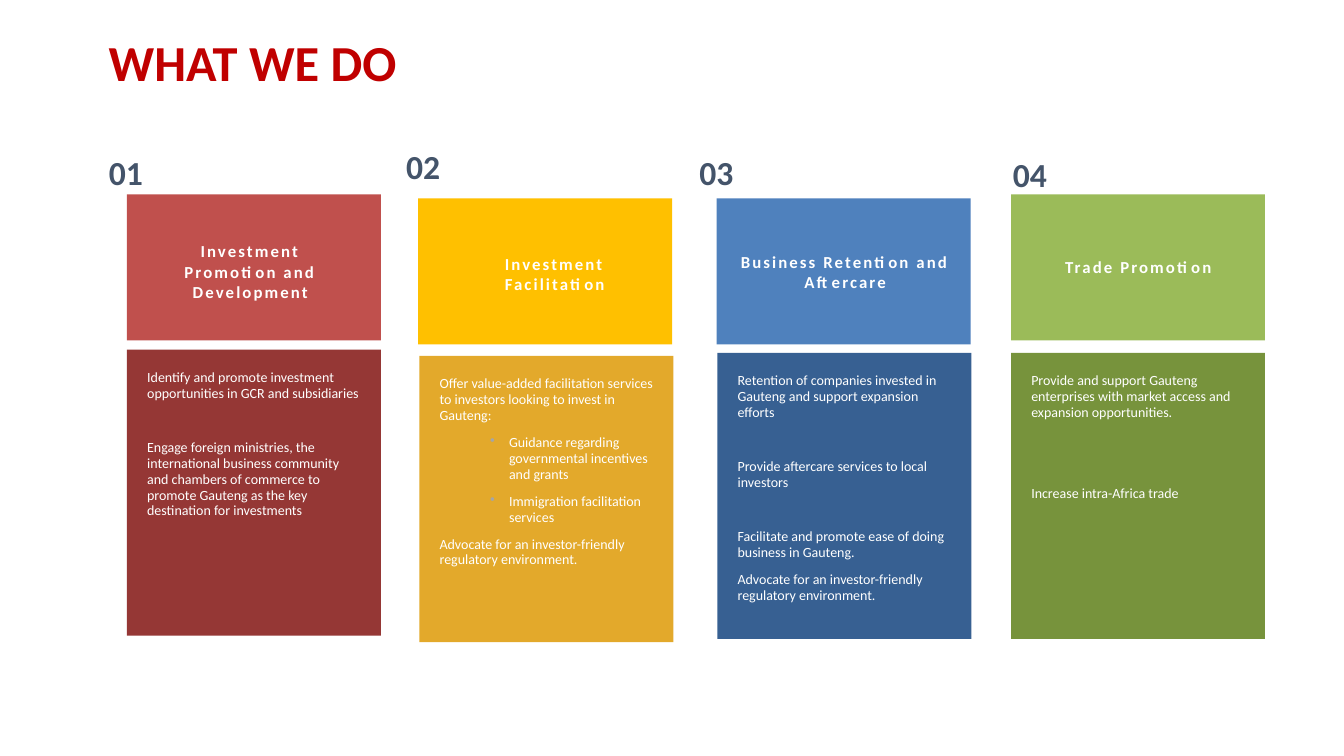
from dataclasses import dataclass

from lxml import etree
from pptx import Presentation
from pptx.dml.color import RGBColor
from pptx.enum import shapes, text
from pptx.oxml import ns
from pptx.util import Cm, Pt


@dataclass(frozen=True)
class Theme:
    font: str = "Calibri"
    title: str = "C00000"
    number: str = "44546A"
    light: str = "FFFFFF"
    bullet: str = "A5A5A5"
    title_size: int = 36
    number_size: int = 24
    heading_size: int = 12
    body_size: int = 10


@dataclass(frozen=True)
class Box:
    left: float
    top: float
    width: float
    height: float

    def lengths(self) -> list[Cm]:
        return [Cm(side) for side in (self.left, self.top, self.width, self.height)]


@dataclass(frozen=True)
class Point:
    words: str
    gap_lines: int = 0
    bulleted: bool = False


@dataclass(frozen=True)
class Service:
    number: str
    heading: str
    number_at: tuple[float, float]
    header_at: tuple[float, float]
    panel_at: tuple[float, float]
    heading_box: Box
    header_fill: str
    panel_fill: str
    points: list[Point]


THEME = Theme()
NUMBER_SIZE = (1.37, 1.27)
HEADER_SIZE = (6.4, 3.68)
PANEL_SIZE = (6.4, 7.21)
PANEL_INSET = 0.51
GAP_LINE = 19.5

ADVOCATE = Point("Advocate for an investor-friendly regulatory environment.")
SERVICES = [
    Service(
        "01", "Investment Promotion and Development",
        (2.49, 3.71), (3.2, 4.9), (3.2, 8.81), Box(3.58, 5.94, 5.46, 1.8),
        "C0504D", "953735",
        [Point("Identify and promote investment opportunities in GCR and subsidiaries"),
         Point("Engage foreign ministries, the international business community and "
               "chambers of commerce to promote Gauteng as the key destination for "
               "investments", gap_lines=1)],
    ),
    Service(
        "02", "Investment Facilitation",
        (9.98, 3.56), (10.54, 5), (10.57, 8.97), Box(11.25, 6.27, 5.46, 1.27),
        "FFC000", "E3A92B",
        [Point("Offer value-added facilitation services to investors looking to "
               "invest in Gauteng:"),
         Point("Guidance regarding governmental incentives and grants", bulleted=True),
         Point("Immigration facilitation services", bulleted=True),
         ADVOCATE],
    ),
    Service(
        "03", "Business Retention and Aftercare",
        (17.37, 3.71), (18.06, 5), (18.08, 8.89), Box(18.14, 6.22, 6.32, 1.27),
        "4F81BD", "376092",
        [Point("Retention of companies invested in Gauteng and support expansion efforts"),
         Point("Provide aftercare services to local investors", gap_lines=1),
         Point("Facilitate and promote ease of doing business in Gauteng.", gap_lines=1),
         ADVOCATE],
    ),
    Service(
        "04", "Trade Promotion",
        (25.27, 3.76), (25.48, 4.9), (25.48, 8.89), Box(25.96, 6.35, 5.46, 0.76),
        "9BBB59", "77933C",
        [Point("Provide and support Gauteng enterprises with market access and "
               "expansion opportunities."),
         Point("Increase intra-Africa trade", gap_lines=2)],
    ),
]


def apply_formats(target, formats: dict) -> None:
    for name, value in formats.items():
        setattr(target, name, value)


def write(paragraph, words: str, size: int, color: str, bold: bool = False,
          spacing: float = 0) -> None:
    run = paragraph.add_run()
    run.text = words
    apply_formats(run.font, {"name": THEME.font, "size": Pt(size), "bold": bold})
    run.font.color.rgb = RGBColor.from_string(color)
    if spacing:
        run._r.get_or_add_rPr().set("spc", str(round(spacing * 100)))


def add_label(slide, box: Box, words: str, size: int, color: str,
              wrap: bool = True, spacing: float = 0) -> None:
    label = slide.shapes.add_textbox(*box.lengths())
    apply_formats(label.text_frame, {
        "word_wrap": wrap,
        "vertical_anchor": text.MSO_ANCHOR.MIDDLE,
        "auto_size": text.MSO_AUTO_SIZE.SHAPE_TO_FIT_TEXT,
    })
    paragraph = label.text_frame.paragraphs[0]
    paragraph.alignment = text.PP_ALIGN.CENTER
    write(paragraph, words, size, color, True, spacing)


def add_block(slide, box: Box, fill: str):
    block = slide.shapes.add_shape(shapes.MSO_SHAPE.RECTANGLE, *box.lengths())
    block.shadow.inherit = False
    block.fill.solid()
    block.fill.fore_color.rgb = RGBColor.from_string(fill)
    block.line.fill.background()
    return block


def add_bullet(paragraph) -> None:
    paragraph.level = 1
    properties = paragraph._p.get_or_add_pPr()
    properties.set("marL", str(Cm(1.75)))
    properties.set("indent", str(Cm(-0.48)))
    tint = etree.SubElement(properties, ns.qn("a:buClr"))
    etree.SubElement(tint, ns.qn("a:srgbClr"), val=THEME.bullet)
    etree.SubElement(properties, ns.qn("a:buChar"), char="•")


def add_panel(slide, service: Service) -> None:
    panel = add_block(slide, Box(*service.panel_at, *PANEL_SIZE), service.panel_fill)
    frame = panel.text_frame
    apply_formats(frame, {f"margin_{side}": Cm(PANEL_INSET)
                          for side in ("left", "top", "right", "bottom")})
    apply_formats(frame, {"word_wrap": True, "vertical_anchor": text.MSO_ANCHOR.TOP})
    for index, point in enumerate(service.points):
        paragraph = frame.add_paragraph() if index else frame.paragraphs[0]
        apply_formats(paragraph, {
            "alignment": text.PP_ALIGN.LEFT,
            "line_spacing": 0.94,
            "space_before": Pt(GAP_LINE * point.gap_lines),
            "space_after": Pt(8),
        })
        if point.bulleted:
            add_bullet(paragraph)
        write(paragraph, point.words, THEME.body_size, THEME.light)


def add_title(slide, words: str) -> None:
    title = slide.shapes.add_textbox(*Box(2.49, 0.89, 29.21, 1.5).lengths())
    apply_formats(title.text_frame, {
        "word_wrap": True, "vertical_anchor": text.MSO_ANCHOR.MIDDLE})
    paragraph = title.text_frame.paragraphs[0]
    paragraph.line_spacing = 0.9
    write(paragraph, words, THEME.title_size, THEME.title, True)


def main() -> None:
    deck = Presentation()
    apply_formats(deck, {"slide_width": Cm(33.87), "slide_height": Cm(19.05)})
    slide = deck.slides.add_slide(deck.slide_layouts[6])
    add_title(slide, "WHAT WE DO")
    for service in SERVICES:
        add_panel(slide, service)
        add_block(slide, Box(*service.header_at, *HEADER_SIZE), service.header_fill)
        add_label(slide, Box(*service.number_at, *NUMBER_SIZE), service.number,
                  THEME.number_size, THEME.number, wrap=False)
        add_label(slide, service.heading_box, service.heading,
                  THEME.heading_size, THEME.light, spacing=1.5)
    deck.save("out.pptx")


if __name__ == "__main__":
    main()
